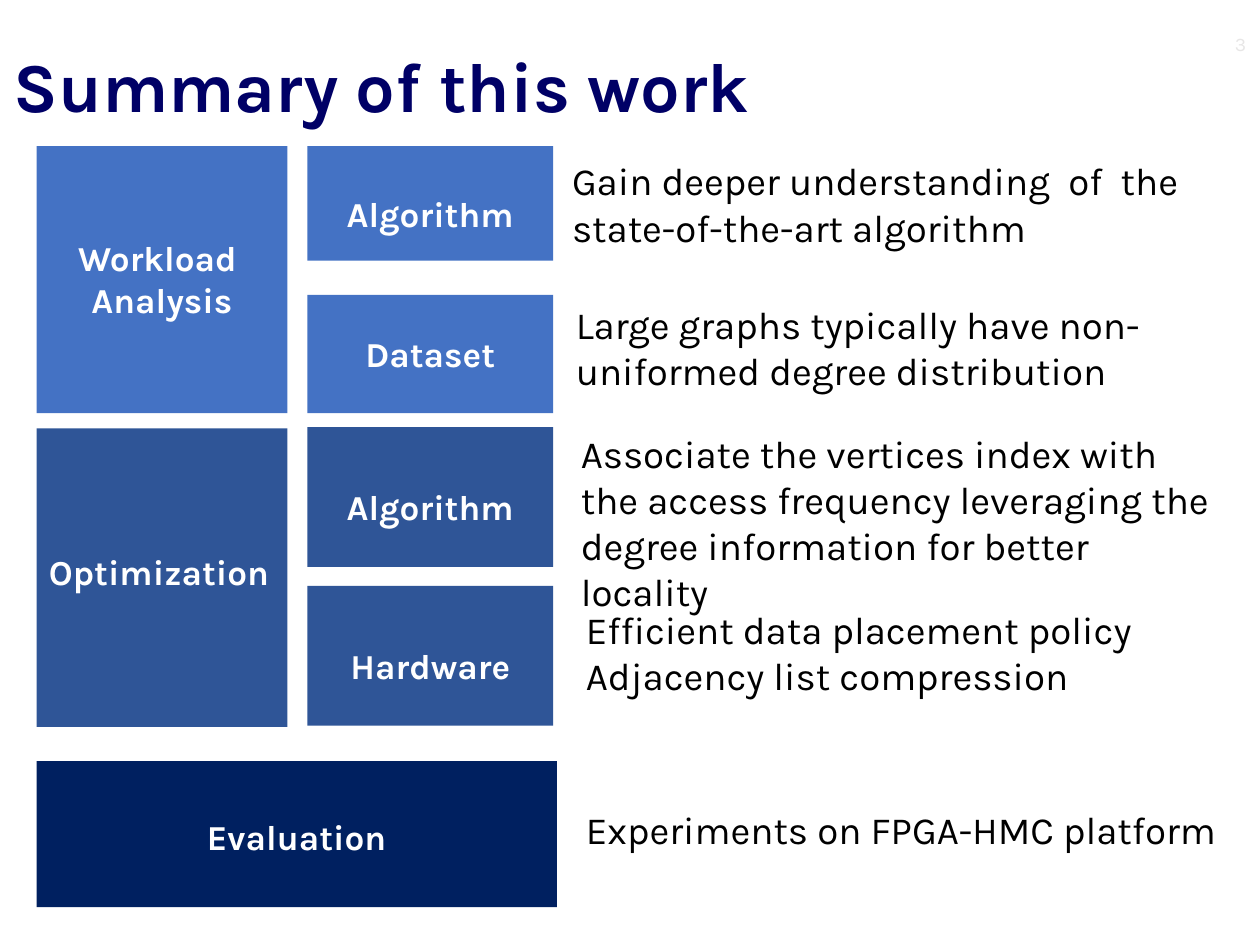
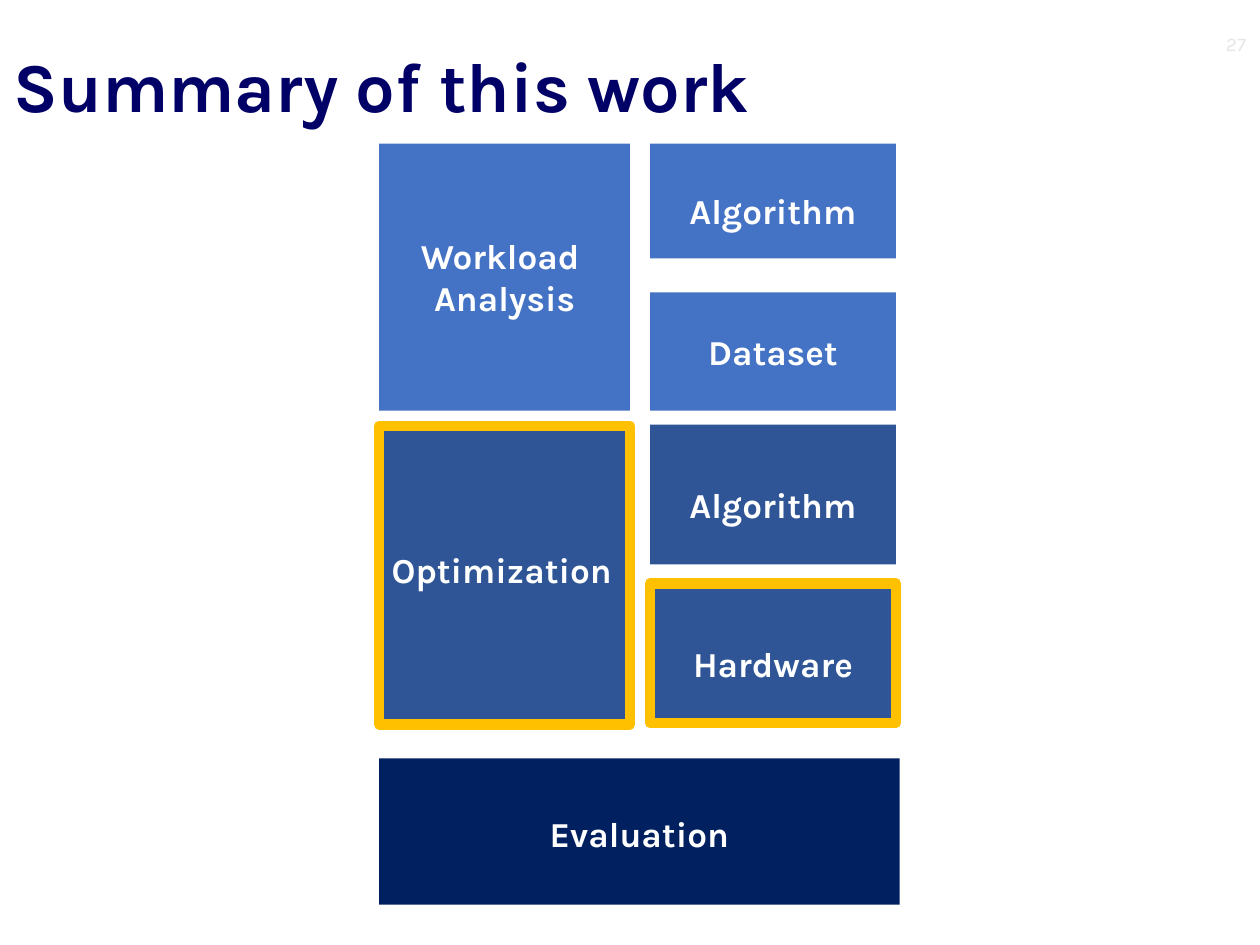
from dataclasses import dataclass

from pptx import Presentation
from pptx.dml.color import RGBColor
from pptx.enum.shapes import MSO_SHAPE
from pptx.enum.text import MSO_ANCHOR, PP_ALIGN
from pptx.util import Inches, Pt

RECTANGLE = MSO_SHAPE.RECTANGLE
TOP, BOTTOM = MSO_ANCHOR.TOP, MSO_ANCHOR.BOTTOM
LEFT, CENTER, RIGHT = PP_ALIGN.LEFT, PP_ALIGN.CENTER, PP_ALIGN.RIGHT


@dataclass(frozen=True)
class Theme:
    font: str = "Karla"
    title: str = "000066"
    body: str = "000000"
    number: str = "E7E6E6"
    box_text: str = "FFFFFF"
    analysis: str = "4472C4"
    optimization: str = "2F5597"
    evaluation: str = "002060"
    highlight: str = "FFC000"
    title_size: int = 40
    body_size: int = 22
    box_size: int = 20
    number_size: int = 11
    highlight_width: int = 6


THEME = Theme()


def write_text(shape, text, size, color, bold=False, align=LEFT, anchor=TOP,
               margins=(0.11, 0.06, 0.11, 0.06), line_spacing=None, before=0, after=0):
    """Fill a shape with styled text; margins run left, top, right, bottom."""
    text_frame = shape.text_frame
    text_frame.text = text
    text_frame.word_wrap = True
    text_frame.vertical_anchor = anchor
    (text_frame.margin_left, text_frame.margin_top,
     text_frame.margin_right, text_frame.margin_bottom) = map(Inches, margins)
    for paragraph in text_frame.paragraphs:
        paragraph.alignment = align
        paragraph.space_before, paragraph.space_after = Pt(before), Pt(after)
        if line_spacing:
            paragraph.line_spacing = line_spacing
        for run in paragraph.runs:
            run.font.name = THEME.font
            run.font.size = Pt(size)
            run.font.bold = bold
            run.font.color.rgb = RGBColor.from_string(color)


def add_text(slide, left, top, width, height, text, size, color, **style):
    textbox = slide.shapes.add_textbox(*map(Inches, (left, top, width, height)))
    write_text(textbox, text, size, color, **style)


# Box positions are relative to the top left corner of the diagram.
SECOND_COLUMN = 2.15
WIDE, NARROW, FULL = 1.99, 1.95, 4.13
# key, text, left, top, width, height, fill, top margin, other text settings
BOXES = [
    ("optimization", "Optimization", 0, 2.24, WIDE, 2.37, THEME.optimization, 0.97,
     {"align": LEFT}),
    ("analysis", "Workload \nAnalysis", 0, 0, WIDE, 2.12, THEME.analysis, 0.72, {}),
    ("analysis algorithm", "Algorithm", SECOND_COLUMN, 0, NARROW, 0.91, THEME.analysis, 0.2,
     {"line_spacing": 1.5, "after": 6}),
    ("dataset", "Dataset", SECOND_COLUMN, 1.18, NARROW, 0.94, THEME.analysis, 0.3,
     {"before": 6, "after": 6}),
    ("optimization algorithm", "Algorithm", SECOND_COLUMN, 2.23, NARROW, 1.11,
     THEME.optimization, 0.3, {"line_spacing": 1.5}),
    ("hardware", "Hardware", SECOND_COLUMN, 3.49, NARROW, 1.11, THEME.optimization, 0.3,
     {"line_spacing": 1.5}),
    ("evaluation", "Evaluation", 0, 4.88, FULL, 1.16, THEME.evaluation, 0.43, {}),
]
# left, top, width, height, text
EXPLANATIONS = [
    (4.43, 1.19, 5.39, 0.74, "Gain deeper understanding  of  the state-of-the-art algorithm"),
    (4.46, 2.33, 5.21, 1.19, "Large graphs typically have non-uniformed degree distribution"),
    (4.5, 3.35, 5.28, 1.19, "Associate the vertices index with the access frequency "
     "leveraging the degree information for better locality"),
    (4.54, 4.75, 5.28, 1.19, "Efficient data placement policy\nAdjacency list compression"),
    (4.54, 6.34, 5.28, 1.19, "Experiments on FPGA-HMC platform"),
]
# slide number, diagram left, diagram top, highlighted boxes, explanations
SUMMARIES = [
    ("3", 0.29, 1.16, (), EXPLANATIONS),
    ("27", 3.01, 1.14, ("optimization", "hardware"), ()),
]

presentation = Presentation()
presentation.slide_width = Inches(10)
presentation.slide_height = Inches(7.5)
blank_layout = presentation.slide_layouts[6]

for number, diagram_left, diagram_top, highlighted, explanations in SUMMARIES:
    slide = presentation.slides.add_slide(blank_layout)
    add_text(slide, 0, 0.32, 10, 0.74, "Summary of this work", THEME.title_size, THEME.title,
             bold=True, anchor=BOTTOM)
    add_text(slide, 9, 0.2, 1, 0.3, number, THEME.number_size, THEME.number, align=RIGHT)

    for key, text, left, top, width, height, fill, top_margin, settings in BOXES:
        box = slide.shapes.add_shape(RECTANGLE, Inches(diagram_left + left),
                                     Inches(diagram_top + top), Inches(width), Inches(height))
        box.shadow.inherit = False
        box.fill.solid()
        box.fill.fore_color.rgb = RGBColor.from_string(fill)
        if key in highlighted:
            box.line.color.rgb = RGBColor.from_string(THEME.highlight)
            box.line.width = Pt(THEME.highlight_width)
        else:
            box.line.fill.background()
        style = {"align": CENTER, "margins": (0.1, top_margin, 0.1, 0.05), **settings}
        write_text(box, text, THEME.box_size, THEME.box_text, bold=True, **style)

    for left, top, width, height, text in explanations:
        add_text(slide, left, top, width, height, text, THEME.body_size, THEME.body)

presentation.save("out.pptx")
